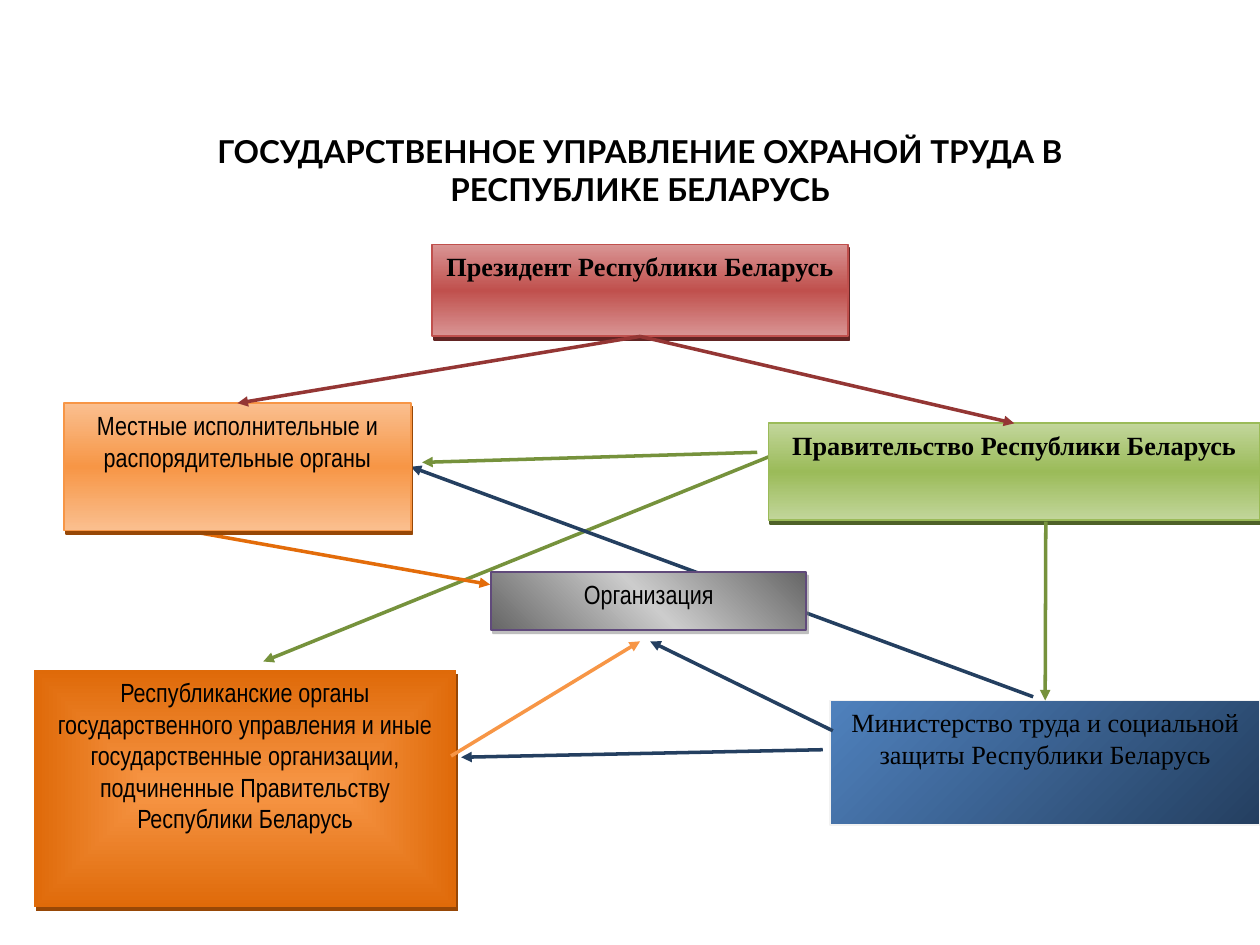
from pptx import Presentation
from pptx.dml.color import RGBColor
from pptx.enum.shapes import MSO_CONNECTOR, MSO_SHAPE
from pptx.enum.text import MSO_ANCHOR, PP_ALIGN
from pptx.oxml import parse_xml
from pptx.oxml.ns import nsdecls
from pptx.util import Inches, Pt

HUES = {
    "black": "000000", "red": "C0504D", "pink": "D99594", "wine": "943634",
    "maroon": "622423", "lime": "9BBB59", "mint": "C2D69B", "green": "76923C",
    "moss": "4E6128", "blue": "4F81BD", "navy": "243F60", "pale": "F2F2F2",
    "orange": "F79646", "peach": "FABF8F", "rust": "DF6A09", "amber": "E36C0A",
    "brown": "974706", "dark": "666666", "light": "CCCCCC", "violet": "604A7B",
    "gray": "7F7F7F",
}
SERIF, NARROW = "Times New Roman", "Arial Narrow"
RADIAL = ('<a:path path="rect"><a:fillToRect l="50000" t="50000" '
          'r="50000" b="50000"/></a:path>')

# name: text, place, gradient hues, angle (None is radial), line, shadow, opacity, font, bold
BOXES = {
    "president": ("Президент Республики Беларусь", (3.43, 1.94, 3.3, 0.73),
                  ("pink", "red", "pink"), 90, "red", "maroon", 100, SERIF, True),
    "cabinet": ("Правительство Республики Беларусь", (6.1, 3.36, 3.9, 0.77),
                ("mint", "lime", "mint"), 90, "lime", "moss", 100, SERIF, True),
    "ministry": ("Министерство труда и социальной защиты Республики Беларусь",
                 (6.59, 5.56, 3.41, 0.99),
                 ("blue", "navy"), 45, "pale", None, 0, SERIF, False),
    "agencies": ("Республиканские органы государственного управления и иные "
                 "государственные организации, подчиненные Правительству "
                 "Республики Беларусь", (0.27, 5.32, 3.35, 1.88),
                 ("orange", "rust"), None, None, "brown", 100, NARROW, False),
    "local": ("Местные исполнительные и распорядительные органы",
              (0.51, 3.2, 2.75, 1.01),
              ("peach", "orange", "peach"), 90, "orange", "brown", 100, NARROW, False),
    "firm": ("Организация", (3.9, 4.54, 2.5, 0.46),
             ("dark", "light", "dark"), 315, "violet", "gray", 50, NARROW, False),
}
# from, to, hue, box and side joined at the start, box and side joined at the end
BACK = [
    ((6.19, 3.59), (2.09, 5.25), "green", None, None),
    ((8.2, 5.53), (3.26, 3.7), "navy", None, ("local", 3)),
    ((1.53, 4.22), (3.89, 4.64), "amber", None, None),
]
FRONT = [
    ((5.08, 2.67), (8.05, 3.36), "wine", ("president", 2), ("cabinet", 0)),
    ((5.08, 2.67), (1.89, 3.2), "wine", ("president", 2), ("local", 0)),
    ((6.01, 3.59), (3.35, 3.67), "green", None, None),
    ((6.61, 5.8), (5.16, 5.09), "navy", None, None),
    ((6.53, 5.95), (3.66, 6.01), "navy", None, None),
    ((8.3, 4.14), (8.3, 5.56), "green", None, ("ministry", 0)),
    ((3.58, 6), (5.08, 5.09), "orange", None, None),
]


def write(frame, text, **form):
    """Put one centred black paragraph in a frame."""
    frame.word_wrap = True
    para = frame.paragraphs[0]
    para.text = text
    para.alignment = PP_ALIGN.CENTER
    for key, value in form.items():
        setattr(para.font, key, value)
    para.font.color.rgb = RGBColor.from_string(HUES["black"])


def draw(start, end, hue):
    """Add an arrow and return it."""
    link = slide.shapes.add_connector(
        MSO_CONNECTOR.STRAIGHT, *map(Inches, start + end))
    link.line.width = Pt(2)
    link.line.color.rgb = RGBColor.from_string(HUES[hue])
    link.line._get_or_add_ln().append(
        parse_xml(f'<a:tailEnd {nsdecls("a")} type="triangle"/>'))
    link._element.spPr.append(parse_xml(f'<a:effectLst {nsdecls("a")}/>'))
    return link


deck = Presentation()
deck.slide_width, deck.slide_height = Inches(10), Inches(7.5)
slide = deck.slides.add_slide(deck.slide_layouts[5])

title = slide.shapes.title
title.left, title.top, title.width, title.height = map(Inches, (0.83, 1, 8.5, 0.7))
title.text_frame.vertical_anchor = MSO_ANCHOR.MIDDLE
write(title.text_frame, "ГОСУДАРСТВЕННОЕ УПРАВЛЕНИЕ ОХРАНОЙ ТРУДА В РЕСПУБЛИКЕ БЕЛАРУСЬ",
      size=Pt(18), name="Lato", bold=True)

links = [draw(*row[:3]) for row in BACK]

shapes = {}
for name, (text, place, hues, angle, edge, shade, alpha, font, bold) in BOXES.items():
    box = slide.shapes.add_shape(MSO_SHAPE.RECTANGLE, *map(Inches, place))
    shapes[name] = box
    box.shadow.inherit = False
    if edge:
        box.line.width = Pt(1)
        box.line.color.rgb = RGBColor.from_string(HUES[edge])
    else:
        box.line.fill.background()

    stops = "".join(
        f'<a:gs pos="{100000 * i // (len(hues) - 1)}"><a:srgbClr val="{HUES[hue]}"/></a:gs>'
        for i, hue in enumerate(hues))
    way = RADIAL if angle is None else f'<a:lin ang="{angle * 60000}" scaled="0"/>'
    box.fill.background()
    props = box._element.spPr
    blank = props.find("{*}noFill")
    props.replace(blank, parse_xml(
        f'<a:gradFill {nsdecls("a")} rotWithShape="1"><a:gsLst>{stops}</a:gsLst>{way}</a:gradFill>'))
    if shade:
        props.find("{*}effectLst").append(parse_xml(
            f'<a:outerShdw {nsdecls("a")} dist="{Pt(2.2)}" dir="{63 * 60000}" '
            f'algn="ctr" rotWithShape="0"><a:srgbClr val="{HUES[shade]}">'
            f'<a:alpha val="{alpha * 1000}"/></a:srgbClr></a:outerShdw>'))

    box.text_frame.vertical_anchor = MSO_ANCHOR.TOP
    write(box.text_frame, text, size=Pt(15), name=font, bold=bold)

links += [draw(*row[:3]) for row in FRONT]
for link, (*_, first, last) in zip(links, BACK + FRONT):
    if first:
        link.begin_connect(shapes[first[0]], first[1])
    if last:
        link.end_connect(shapes[last[0]], last[1])

deck.save("out.pptx")
